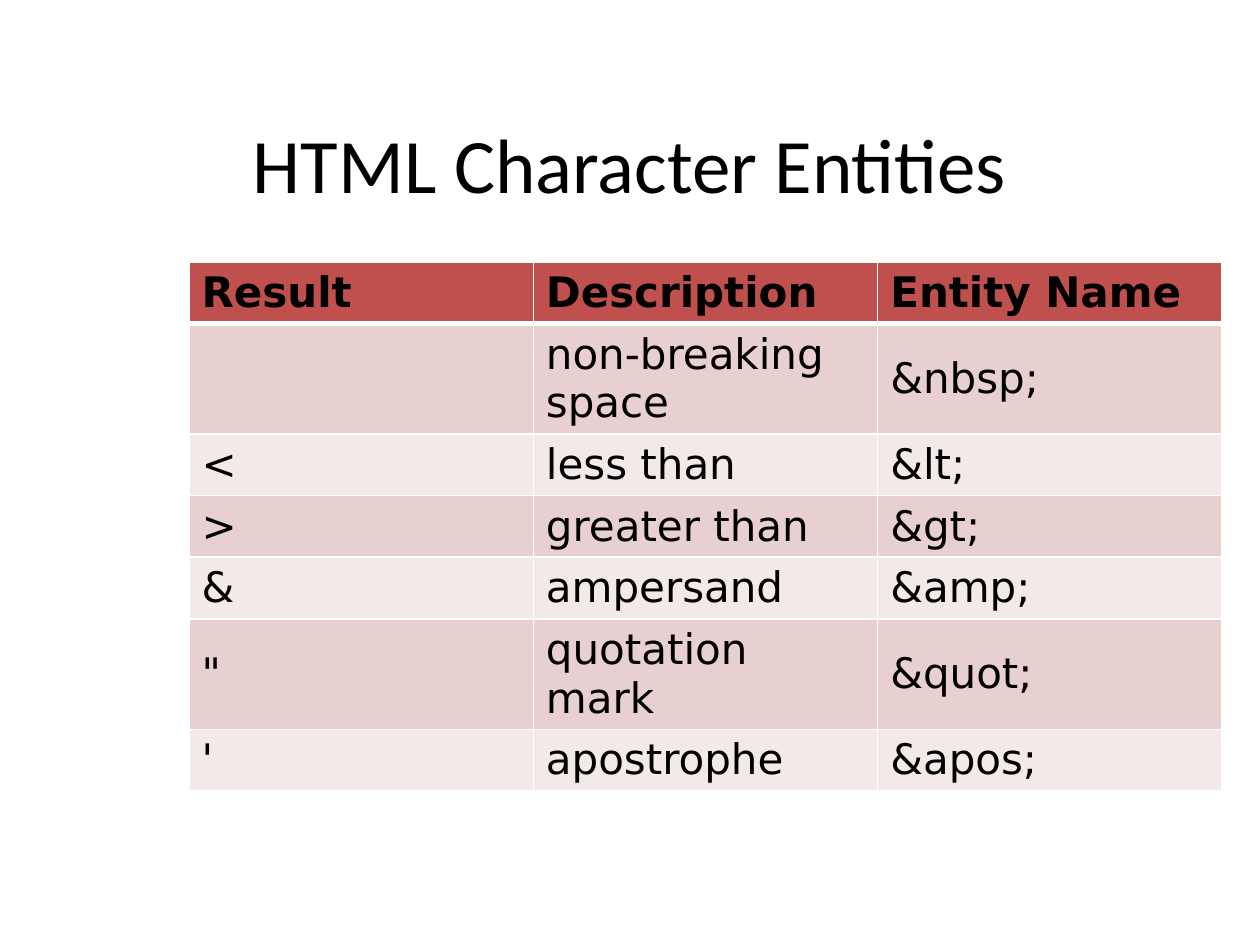
from dataclasses import dataclass

from lxml.etree import SubElement
from pptx import Presentation
from pptx.dml.color import RGBColor
from pptx.enum.text import MSO_ANCHOR, PP_ALIGN
from pptx.oxml.ns import qn
from pptx.util import Inches, Pt

# Content
TITLE = "HTML Character Entities"
ROWS = [
    ("Result", "Description", "Entity Name"),
    ("", "non-breaking space", "&nbsp;"),
    ("<", "less than", "&lt;"),
    (">", "greater than", "&gt;"),
    ("&", "ampersand", "&amp;"),
    ('"', "quotation mark", "&quot;"),
    ("'", "apostrophe", "&apos;"),
]


@dataclass(frozen=True)
class Theme:
    title_font: str = "Calibri"
    table_font: str = "DejaVu Sans"
    title_size: int = 44
    table_size: int = 24
    text: str = "000000"
    header: str = "C0504D"
    bands: tuple = ("E8D0D0", "F4E9E9")
    border: str = "FFFFFF"
    thin: int = 1
    thick: int = 3


THEME = Theme()


def add_text(tf, text, font, size, bold=False, align=PP_ALIGN.LEFT):
    p = tf.paragraphs[0]
    p.alignment = align
    r = p.add_run()
    r.text = text
    r.font.name = font
    r.font.size = Pt(size)
    r.font.bold = bold
    r.font.color.rgb = RGBColor.from_string(THEME.text)


def set_borders(cell, widths):
    """Draw the cell borders; widths maps a side (L, R, T, B) to points."""
    tc_pr = cell._tc.get_or_add_tcPr()
    for i, (side, width) in enumerate(widths.items()):
        ln = SubElement(tc_pr, qn(f"a:ln{side}"), w=str(Pt(width)))
        fill = SubElement(ln, qn("a:solidFill"))
        SubElement(fill, qn("a:srgbClr"), val=THEME.border)
        tc_pr.insert(i, ln)  # borders come before the cell fill


prs = Presentation()
prs.slide_width, prs.slide_height = Inches(10), Inches(7.5)
s = prs.slides.add_slide(prs.slide_layouts[5])

# Title
title = s.shapes.title
title.left, title.top = Inches(0.5), Inches(0.67)
title.width, title.height = Inches(9), Inches(1.25)
title.text_frame.vertical_anchor = MSO_ANCHOR.MIDDLE
add_text(title.text_frame, TITLE, THEME.title_font, THEME.title_size,
         align=PP_ALIGN.CENTER)

# Entity table: rows grow to fit their text
row_height = 0.41
table = s.shapes.add_table(
    len(ROWS), len(ROWS[0]), Inches(1.5), Inches(2.08),
    Inches(8.2), Inches(row_height * len(ROWS))).table
for row in table.rows:
    row.height = Inches(row_height)

for i, row in enumerate(ROWS):
    header = i == 0
    color = THEME.header if header else THEME.bands[(i - 1) % 2]
    widths = {
        "L": THEME.thin,
        "R": THEME.thin,
        "T": THEME.thick if i == 1 else THEME.thin,
        "B": THEME.thick if header else THEME.thin,
    }
    for j, text in enumerate(row):
        cell = table.cell(i, j)
        cell.vertical_anchor = MSO_ANCHOR.MIDDLE
        cell.fill.solid()
        cell.fill.fore_color.rgb = RGBColor.from_string(color)
        set_borders(cell, widths)
        if text:
            add_text(cell.text_frame, text, THEME.table_font,
                     THEME.table_size, bold=header)

prs.save("out.pptx")
